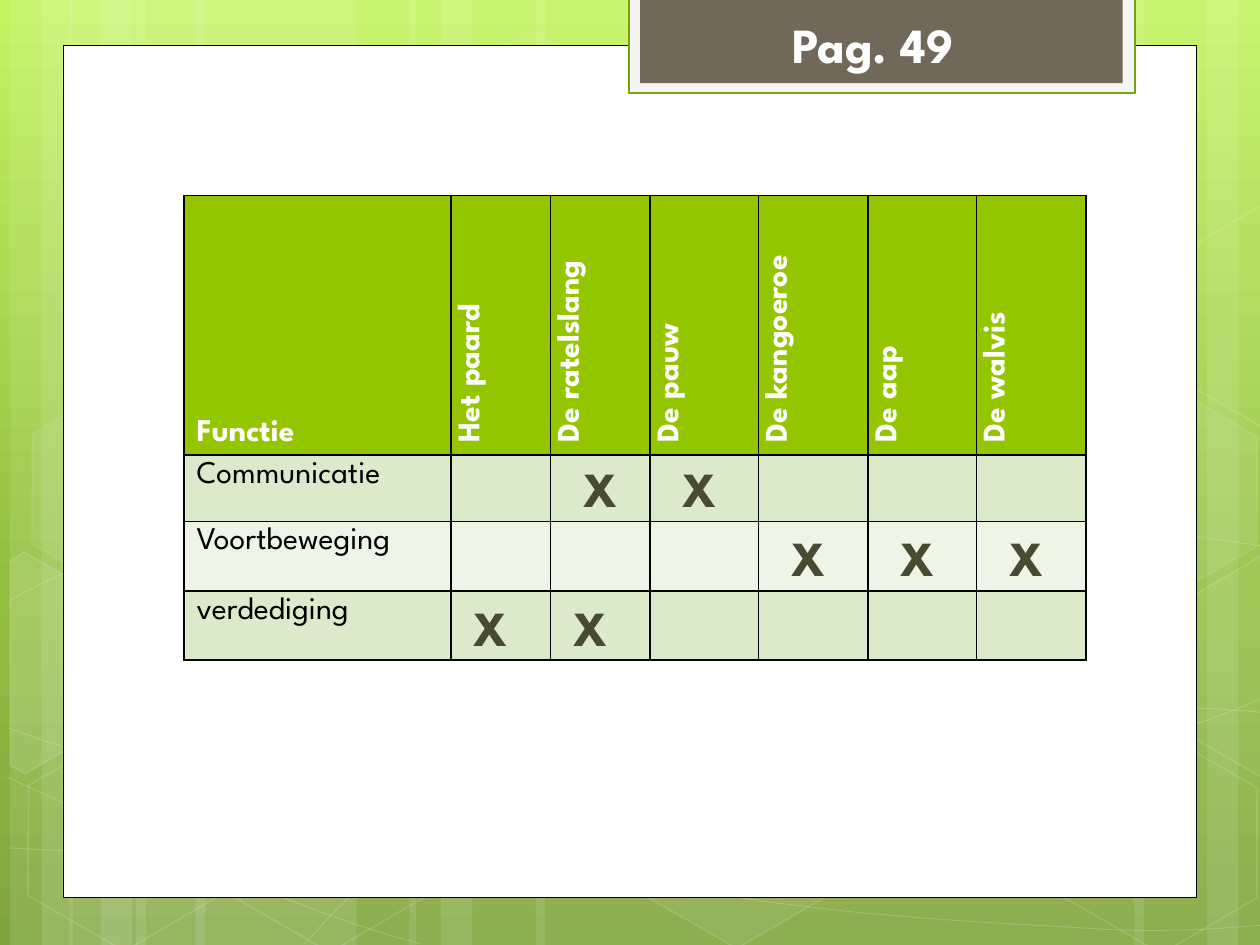
from copy import deepcopy
from itertools import accumulate
from math import cos, radians, sin

from lxml import etree
from pptx import Presentation
from pptx import util as u
from pptx.dml.color import RGBColor
from pptx.enum import shapes as sh, text as tx
from pptx.oxml.ns import qn

FONT = "League Spartan"
HUES = {
    "white": "FFFFFF", "black": "000000", "pale": "F5F5F5", "edge": "74A510",
    "brown": "71685A", "head": "94C600", "odd": "DCEACC", "even": "EEF5E7",
    "mark": "484A32", "top": "C3F35F", "mid": "93BF3F", "base": "81A53E",
}
SKY = [("top", 0), ("mid", 0.62), ("base", 1)]

TITLE = "Pag. 49"
HEADS = ["Functie", "Het paard", "De ratelslang", "De pauw",
         "De kangoeroe", "De aap", "De walvis"]
# function, then the numbers of the columns that are ticked
ROWS = [("Communicatie", [2, 3]), ("Voortbeweging", [4, 5, 6]),
        ("verdediging", [1, 2])]
COLS = [2.12, 0.79, 0.79, 0.86, 0.87, 0.86, 0.87]
TALL = [2.06, 0.53, 0.55, 0.55]
LEFT, TOP = 1.46, 1.55
SHIFT = [(0.16, -0.02), (0.16, 0), (0.08, 0)]  # inset of the marks in each row

# left, width
BANDS = [(1.08, 1.75), (0.08, 0.5), (0.33, 0.83), (1.55, 1.75), (0.55, 0.5),
         (0.8, 0.83), (7.33, 1.75), (9.58, 0.5), (9, 0.83), (4.25, 3.08),
         (3.25, 0.5), (3.5, 0.83)]
# start point, then cubic curves as two handles and an end
CURVES = [
    [(0.07, 6.73), (0.61, 6.76), (1.15, 6.79), (1.9, 6.78), (2.65, 6.77),
     (3.58, 6.75), (4.58, 6.65), (5.58, 6.55), (7, 6.36), (7.92, 6.17),
     (8.83, 5.98), (9.77, 5.68), (10.07, 5.51)],
    [(0.07, 4.77), (0.36, 4.61), (0.65, 4.46), (1.21, 4.31), (1.78, 4.16),
     (2.59, 3.94), (3.47, 3.87), (4.36, 3.8), (5.44, 3.79), (6.54, 3.87),
     (7.64, 3.95), (9.47, 4.26), (10.07, 4.34)],
    [(0.06, 6.17), (1.27, 6.72), (2.47, 7.27), (3.34, 7.49)],
    [(0.07, 5.78), (0.38, 5.89), (0.7, 6), (1.28, 6.16), (1.86, 6.31),
     (2.73, 6.56), (3.57, 6.73), (4.4, 6.9), (5.45, 7.08), (6.28, 7.18),
     (7.11, 7.29), (8, 7.33), (8.53, 7.36), (9.05, 7.4), (9.19, 7.38),
     (9.45, 7.38), (9.71, 7.37), (9.89, 7.35), (10.07, 7.34)],
    [(2.42, 7.49), (2.6, 7.29), (2.78, 7.09), (3.02, 6.91), (3.26, 6.73),
     (3.6, 6.53), (3.88, 6.39), (4.16, 6.25), (4.33, 6.19), (4.7, 6.09),
     (5.06, 5.99), (5.73, 5.85), (6.08, 5.78), (6.44, 5.71), (6.49, 5.71),
     (6.8, 5.69), (7.11, 5.66), (7.6, 5.63), (7.94, 5.62), (8.29, 5.61),
     (8.86, 5.62), (8.86, 5.62), (9.08, 5.62), (9.31, 5.62), (9.53, 5.62),
     (9.71, 5.63), (9.88, 5.64), (9.97, 5.65), (10.06, 5.66),
     (10.03, 5.65), (10.06, 5.66)],
]
# left, top, opacity of fill and of line in percent
HEXES = [(3.34, 0.36, 4, 8), (4.97, 5.89, 6, 12), (0.11, 5.91, 0, 12),
         (0.14, 3.12, 7, 8), (1.74, 5.92, 0, 12), (7.53, 4.53, 10, 12),
         (8.34, 5.93, 0, 12), (8.34, 3.14, 7, 8)]
TURN = 30
# hexagons cut off by the slide's edge: opacity of fill, pivot, turned corners
CUTS = [
    (10, (0.36, 5.35), [(0.08, 4.45), (0.19, 4.38), (0.96, 4.82),
                        (0.95, 5.7), (0.2, 6.14), (0.08, 6.07)]),
    (4, (9.85, 5.2), [(9.26, 4.85), (10.01, 4.41), (10.09, 4.46),
                      (10.09, 6.13), (10.02, 6.17), (9.26, 5.73)]),
    (0, (9.85, 2.41), [(9.26, 2.07), (10.01, 1.63), (10.1, 1.68),
                       (10.09, 3.35), (10.02, 3.39), (9.26, 2.95)]),
]


def rgb(name):
    return RGBColor.from_string(HUES[name])


def inch(*sizes):
    return [u.Inches(size) for size in sizes]


def fade(shape, route, pct):
    """Set the opacity of the colour found at route in the shape's properties."""
    clr = shape.element.spPr.find("/".join(qn(tag) for tag in route.split()))
    etree.SubElement(clr, qn("a:alpha"), val=str(pct * 1000))


def paint(shape, fill=None, line=None, width=1, see=100, rim=100):
    """Fill and outline a shape; see and rim are their opacities."""
    shape.shadow.inherit = False
    if fill and see:
        shape.fill.solid()
        shape.fill.fore_color.rgb = rgb(fill)
        if see < 100:
            fade(shape, "a:solidFill a:srgbClr", see)
    else:
        shape.fill.background()
    if line:
        shape.line.color.rgb = rgb(line)
        shape.line.width = u.Pt(width)
        if rim < 100:
            fade(shape, "a:ln a:solidFill a:srgbClr", rim)
    else:
        shape.line.fill.background()


def add(slide, kind, box, **look):
    shape = slide.shapes.add_shape(kind, *inch(*box))
    paint(shape, **look)
    return shape


def draw(slide, points, close, **look):
    dots = [inch(*point) for point in points]
    pen = slide.shapes.build_freeform(*dots[0])
    pen.add_line_segments(dots[1:], close=close)
    shape = pen.convert_to_shape()
    paint(shape, **look)
    return shape


def bend(shape):
    """Join each three line segments into one cubic curve."""
    lines = list(shape.element.iter(qn("a:lnTo")))
    for i in range(0, len(lines), 3):
        curve = etree.Element(qn("a:cubicBezTo"))
        lines[i].addprevious(curve)
        for line in lines[i:i + 3]:
            curve.append(line[0])
            line.getparent().remove(line)


def unturn(point, pivot):
    x, y = point[0] - pivot[0], point[1] - pivot[1]
    c, s = cos(radians(TURN)), sin(radians(TURN))
    return pivot[0] + x * c + y * s, pivot[1] - x * s + y * c


def write(frame, words, size, hue, bold):
    frame.text = words
    for run in frame.paragraphs[0].runs:
        run.font.name, run.font.size, run.font.bold = FONT, u.Pt(size), bold
        run.font.color.rgb = rgb(hue)


def backdrop(slide):
    fill = slide.background.fill
    fill.gradient()
    fill.gradient_angle = 270
    stops = next(slide.element.iter(qn("a:gsLst")))
    stops.append(deepcopy(stops[0]))
    for stop, (hue, place) in zip(fill.gradient_stops, SKY):
        stop.color.rgb = rgb(hue)
        stop.position = place
    rect = sh.MSO_SHAPE.RECTANGLE
    for left, wide in BANDS:
        add(slide, rect, (left, 0, wide, 7.5), fill="white", see=10)
    for nodes in CURVES:
        bend(draw(slide, nodes, False, line="white", width=0.5, rim=20))
    for left, top, see, rim in HEXES:
        cell = add(slide, sh.MSO_SHAPE.HEXAGON, (left, top, 1.75, 1.52),
                   fill="white", line="white", see=see, rim=rim)
        cell.adjustments[0] = 0.285
        cell.rotation = TURN
    for see, pivot, points in CUTS:
        flat = [unturn(point, pivot) for point in points]
        cut = draw(slide, flat, True, fill="white", line="white", see=see, rim=12)
        cut.rotation = TURN
    add(slide, rect, (0.5, 0.36, 9, 6.76), fill="white", line="black", width=0.5)
    add(slide, rect, (4.99, -0.02, 4.02, 0.76), fill="pale", line="edge", width=1.25)
    add(slide, rect, (5.08, -0.02, 3.83, 0.68), fill="brown")


def heading(slide):
    title = slide.shapes.title
    title.left, title.top, title.width, title.height = inch(5.95, 0.05, 1.96, 0.6)
    paint(title, fill="brown")
    write(title.text_frame, TITLE, 28, "white", True)
    title.text_frame.vertical_anchor = tx.MSO_ANCHOR.MIDDLE
    title.text_frame.paragraphs[0].alignment = tx.PP_ALIGN.CENTER
    title.element.getparent().append(title.element)  # in front of the banner


def dress(cell, hue):
    cell.fill.solid()
    cell.fill.fore_color.rgb = rgb(hue)
    prop = cell._tc.get_or_add_tcPr()
    for i, side in enumerate(("a:lnL", "a:lnR", "a:lnT", "a:lnB")):
        line = etree.Element(qn(side), w=str(u.Pt(1)))
        solid = etree.SubElement(line, qn("a:solidFill"))
        etree.SubElement(solid, qn("a:srgbClr"), val=HUES["black"])
        prop.insert(i, line)


def grid(slide):
    table = slide.shapes.add_table(
        len(TALL), len(COLS), *inch(LEFT, TOP, sum(COLS), sum(TALL))).table
    for col, wide in zip(table.columns, COLS):
        col.width = u.Inches(wide)
    for r, (row, tall) in enumerate(zip(table.rows, TALL)):
        row.height = u.Inches(tall)
        for cell in row.cells:
            dress(cell, "head" if r == 0 else "odd" if r % 2 else "even")
    for c, head in enumerate(HEADS):
        cell = table.cell(0, c)
        write(cell.text_frame, head, 18, "white", True)
        if c:
            cell._tc.tcPr.set("vert", "vert270")
        else:
            cell.vertical_anchor = tx.MSO_ANCHOR.BOTTOM
    xs = list(accumulate(COLS, initial=LEFT))
    ys = list(accumulate(TALL, initial=TOP))
    for r, ((name, ticks), (dx, dy)) in enumerate(zip(ROWS, SHIFT), 1):
        write(table.cell(r, 0).text_frame, name, 18, "black", False)
        for c in ticks:
            box = slide.shapes.add_textbox(*inch(xs[c] + dx, ys[r] + dy, 0.55, 0.57))
            box.text_frame.word_wrap = True
            box.text_frame.auto_size = tx.MSO_AUTO_SIZE.SHAPE_TO_FIT_TEXT
            write(box.text_frame, "X", 28, "mark", True)


deck = Presentation()
deck.slide_width, deck.slide_height = inch(10, 7.5)
page = deck.slides.add_slide(deck.slide_layouts[5])
backdrop(page)
heading(page)
grid(page)
deck.save("out.pptx")
